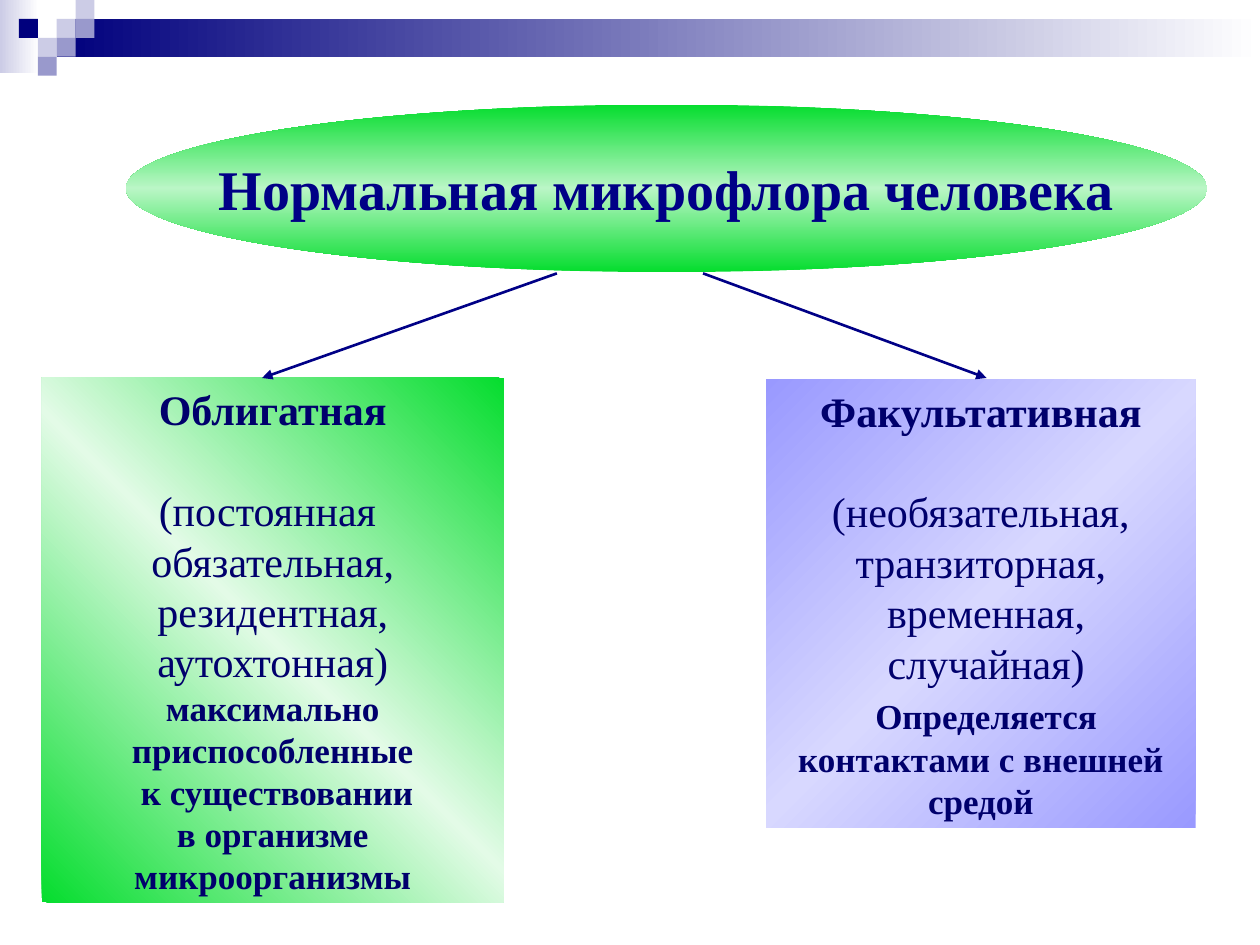
from lxml import etree
from pptx import Presentation
from pptx.dml.color import RGBColor
from pptx.enum.shapes import MSO_CONNECTOR, MSO_SHAPE
from pptx.enum.text import MSO_ANCHOR, PP_ALIGN
from pptx.oxml.ns import qn
from pptx.util import Inches, Pt

RECT, OVAL = MSO_SHAPE.RECTANGLE, MSO_SHAPE.OVAL
STRAIGHT = MSO_CONNECTOR.STRAIGHT
MIDDLE, CENTER = MSO_ANCHOR.MIDDLE, PP_ALIGN.CENTER

FONT = "Times New Roman"
WHITE = RGBColor(0xFF, 0xFF, 0xFF)
NAVY = RGBColor(0x00, 0x00, 0x7D)
TITLE_BLUE = RGBColor(0x00, 0x00, 0x86)
TEXT_BLUE = RGBColor(0x00, 0x00, 0x6C)
LAVENDER = RGBColor(0xCC, 0xCC, 0xE6)
PERIWINKLE = RGBColor(0x99, 0x99, 0xCC)
GREEN = RGBColor(0x05, 0xDD, 0x2E)
SOFT_GREEN = RGBColor(0xBA, 0xF6, 0xC6)
PALE_GREEN = RGBColor(0xE3, 0xFB, 0xE7)
VIOLET = RGBColor(0x99, 0x99, 0xFF)
PALE_VIOLET = RGBColor(0xD8, 0xD8, 0xFF)

CELL = 0.15  # side of one square of the corner mosaic, inches
MOSAIC = [  # column, row, colour
    (3, 1, LAVENDER), (4, 0, LAVENDER), (4, 1, PERIWINKLE), (2, 2, LAVENDER),
    (1, 1, NAVY), (3, 2, PERIWINKLE), (2, 3, PERIWINKLE),
]


def set_gradient(shape, colors, angle):
    """Fill with evenly spaced colour stops; angle is clockwise degrees."""
    shape.fill.gradient()
    grad = shape._element.spPr.find(qn("a:gradFill"))
    for child in list(grad):
        grad.remove(child)
    stops = etree.SubElement(grad, qn("a:gsLst"))
    for i, color in enumerate(colors):
        pos = 100000 * i // (len(colors) - 1)
        gs = etree.SubElement(stops, qn("a:gs"), pos=str(pos))
        etree.SubElement(gs, qn("a:srgbClr"), val=str(color))
    etree.SubElement(grad, qn("a:lin"), ang=str(angle * 60000), scaled="1")


def add_block(s, kind, box, *colors, angle=0):
    sp = s.shapes.add_shape(kind, *map(Inches, box))
    sp.shadow.inherit = False
    sp.line.fill.background()
    if len(colors) > 1:
        set_gradient(sp, colors, angle)
    else:
        sp.fill.solid()
        sp.fill.fore_color.rgb = colors[0]
    return sp


def add_run(p, text, size=24, bold=False, color=TEXT_BLUE):
    r = p.add_run()
    r.text = text
    r.font.name, r.font.size, r.font.bold = FONT, Pt(size), bold
    r.font.color.rgb = color


def add_text(sp, paragraphs, wrap=True):
    """Each paragraph is a list of (text, format) runs."""
    tf = sp.text_frame
    tf.word_wrap, tf.vertical_anchor = wrap, MIDDLE
    for i, runs in enumerate(paragraphs):
        p = tf.add_paragraph() if i else tf.paragraphs[0]
        p.alignment = CENTER
        for text, fmt in runs:
            add_run(p, text, **fmt)
    return tf


def add_card(s, box, colors, angle, heading, kinds, notes):
    sp = add_block(s, RECT, box, *colors, angle=angle)
    paragraphs = [[(heading, {"bold": True})]]
    paragraphs += [[(kind, {})] for kind in kinds]
    tf = add_text(sp, paragraphs + notes)
    tf.paragraphs[0].space_after = Pt(28.8)


def add_arrow(s, start, end):
    line = s.shapes.add_connector(STRAIGHT, *map(Inches, start + end))
    line.line.color.rgb, line.line.width = TITLE_BLUE, Pt(1.5)
    etree.SubElement(line.line._get_or_add_ln(), qn("a:tailEnd"), type="triangle")
    etree.SubElement(line._element.spPr, qn("a:effectLst"))


def add_header(s):
    add_block(s, RECT, (0, 0, 0.31, 0.58), LAVENDER, WHITE)
    add_block(s, RECT, (3 * CELL, CELL, 10 - 3 * CELL, 2 * CELL), NAVY, WHITE)
    for col, row, color in MOSAIC:
        add_block(s, RECT, (col * CELL, row * CELL, CELL, CELL), color)


def main():
    prs = Presentation()
    prs.slide_width, prs.slide_height = Inches(10), Inches(7.5)
    s = prs.slides.add_slide(prs.slide_layouts[6])
    add_header(s)

    title = add_block(s, OVAL, (1, 0.83, 8.58, 1.33), GREEN, SOFT_GREEN, GREEN, angle=90)
    add_text(title, [[("Нормальная микрофлора человека",
                       {"size": 32, "bold": True, "color": TITLE_BLUE})]], wrap=False)

    note = {"size": 20, "bold": True}
    add_card(s, (0.33, 3, 3.67, 4.16), (GREEN, PALE_GREEN, GREEN), 315, "Облигатная",
             ["(постоянная ", "обязательная,", "резидентная,", "аутохтонная)"],
             [[("максимально приспособленные", note)],
              [(" к существовании", note)],
              [("в организме микроорганизмы", note)]])
    add_card(s, (6.08, 3.01, 3.41, 3.56), (VIOLET, PALE_VIOLET, VIOLET), 45, "Факультативная",
             [" (необязательная, ", "транзиторная,", " временная,", " случайная)"],
             [[(" ", {"bold": True}),
               ("Определяется контактами с внешней средой", note)]])

    for start_x, end_x in ((4.42, 2.08), (5.58, 7.83)):
        add_arrow(s, (start_x, 2.17), (end_x, 3))
    prs.save("out.pptx")


if __name__ == "__main__":
    main()
